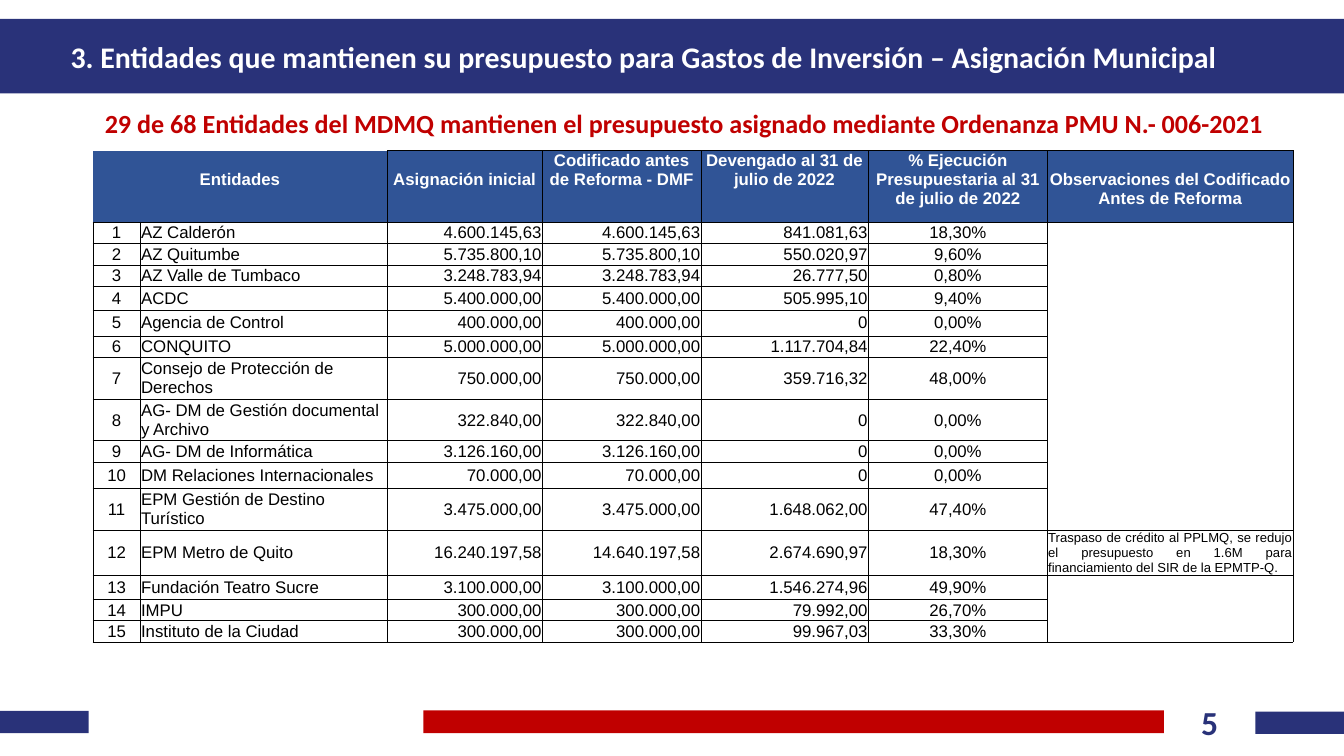
import pptx
import pptx.util
import pptx.dml.color
import pptx.enum.shapes
import pptx.enum.text
import pptx.oxml

Inches = pptx.util.Inches
RGBColor = pptx.dml.color.RGBColor
Align = pptx.enum.text.PP_ALIGN
Anchor = pptx.enum.text.MSO_ANCHOR

NAVY = RGBColor(0x29, 0x32, 0x79)
RED = RGBColor(0xC0, 0x00, 0x00)
BLUE = RGBColor(0x30, 0x54, 0x96)
WHITE = RGBColor(0xFF, 0xFF, 0xFF)
BLACK = RGBColor(0x00, 0x00, 0x00)

BARS = [
    (6.3, 10.57, 11.02, 0.34, RED),
    (0, 10.58, 1.32, 0.33, NAVY),
    (18.68, 10.59, 1.32, 0.33, NAVY),
    (0, 0.28, 20, 1.11, NAVY),
]
TEXTS = [
    ("5", (17.32, 10.4, 1.36, 0.71), 36, NAVY, Align.CENTER, Anchor.TOP, (0.1, 0.05)),
    ("3. Entidades que mantienen su presupuesto para Gastos de Inversión – Asignación Municipal",
     (0.87, 0.28, 17.76, 1.11), 32, WHITE, Align.LEFT, Anchor.MIDDLE, (0.18, 0.09)),
    ("29 de 68 Entidades del MDMQ mantienen el presupuesto asignado mediante Ordenanza PMU N.- 006-2021",
     (1.38, 1.39, 17.86, 0.87), 28, RED, Align.LEFT, Anchor.MIDDLE, (0.18, 0.09)),
]
HEADS = [
    ("Entidades", 1),
    ("", 0),
    ("Asignación inicial", 1),
    ("Codificado antes de Reforma - DMF", 0),
    ("Devengado al 31 de julio de 2022", 0),
    ("% Ejecución Presupuestaria al 31 de julio de 2022", 0),
    ("Observaciones del Codificado Antes de Reforma", 1),
]
ROWS = [
    ("AZ Calderón", "4.600.145,63", "4.600.145,63", "841.081,63", "18,30%"),
    ("AZ Quitumbe", "5.735.800,10", "5.735.800,10", "550.020,97", "9,60%"),
    ("AZ Valle de Tumbaco", "3.248.783,94", "3.248.783,94", "26.777,50", "0,80%"),
    ("ACDC", "5.400.000,00", "5.400.000,00", "505.995,10", "9,40%"),
    ("Agencia de Control", "400.000,00", "400.000,00", "0", "0,00%"),
    ("CONQUITO", "5.000.000,00", "5.000.000,00", "1.117.704,84", "22,40%"),
    ("Consejo de Protección de Derechos", "750.000,00", "750.000,00", "359.716,32", "48,00%"),
    ("AG- DM de Gestión documental y Archivo", "322.840,00", "322.840,00", "0", "0,00%"),
    ("AG- DM de Informática", "3.126.160,00", "3.126.160,00", "0", "0,00%"),
    ("DM Relaciones Internacionales", "70.000,00", "70.000,00", "0", "0,00%"),
    ("EPM Gestión de Destino Turístico", "3.475.000,00", "3.475.000,00", "1.648.062,00", "47,40%"),
    ("EPM Metro de Quito", "16.240.197,58", "14.640.197,58", "2.674.690,97", "18,30%"),
    ("Fundación Teatro Sucre", "3.100.000,00", "3.100.000,00", "1.546.274,96", "49,90%"),
    ("IMPU", "300.000,00", "300.000,00", "79.992,00", "26,70%"),
    ("Instituto de la Ciudad", "300.000,00", "300.000,00", "99.967,03", "33,30%"),
]
NOTES = {12: "Traspaso de crédito al PPLMQ, se redujo el presupuesto en 1.6M "
             "para financiamiento del SIR de la EPMTP-Q."}
WIDTHS = [0.71, 3.67, 2.31, 2.36, 2.49, 2.67, 3.65]
HEIGHTS = [1.06, 0.32, 0.32, 0.32, 0.35, 0.39, 0.32, 0.62, 0.62,
           0.32, 0.39, 0.62, 0.67, 0.36, 0.32, 0.32]
HEIGHTS[12] = 0.67
ALIGNS = [Align.CENTER, Align.LEFT, Align.RIGHT, Align.RIGHT,
          Align.RIGHT, Align.CENTER, Align.JUSTIFY]
MERGES = [(0, 0, 0, 1), (1, 6, 11, 6), (13, 6, 15, 6)]
LINE = 0.28


def style(par, size, face, color, bold, align):
    par.alignment = align
    par.font.size = pptx.util.Pt(size)
    par.font.name = face
    par.font.bold = bold
    par.font.color.rgb = color


def add_bar(slide, left, top, width, height, color):
    bar = slide.shapes.add_shape(pptx.enum.shapes.MSO_SHAPE.RECTANGLE,
                                 *map(Inches, (left, top, width, height)))
    bar.shadow.inherit = False
    bar.fill.solid()
    bar.fill.fore_color.rgb = color
    bar.line.fill.background()


def add_text(slide, text, place, size, color, align, anchor, inset):
    frame = slide.shapes.add_textbox(*map(Inches, place)).text_frame
    frame.word_wrap = True
    frame.vertical_anchor = anchor
    frame.margin_left = frame.margin_right = Inches(inset[0])
    frame.margin_top = frame.margin_bottom = Inches(inset[1])
    frame.text = text
    style(frame.paragraphs[0], size, "Calibri", color, True, align)


def add_edges(cell, sides):
    for side in sides:
        cell._tc.get_or_add_tcPr().append(pptx.oxml.parse_xml(
            f'<a:ln{side} xmlns:a="http://schemas.openxmlformats.org/drawingml/2006/main" w="6350">'
            f'<a:solidFill><a:srgbClr val="{BLACK}"/></a:solidFill></a:ln{side}>'))


def fill_cell(cell, text, row, col):
    head = row == 0
    drop = HEADS[col][1] * LINE if head else 0
    cell.margin_left = cell.margin_right = Inches(0.01)
    cell.margin_top = Inches(0.01 + drop)
    cell.margin_bottom = 0
    cell.vertical_anchor = Anchor.TOP if head else Anchor.MIDDLE
    cell.text = text
    size = 14 if col == 6 and not head else 18
    style(cell.text_frame.paragraphs[0], size, "Arial", WHITE if head else BLACK,
          head, Align.CENTER if head else ALIGNS[col])
    add_edges(cell, "RB" if head and col < 2 else "LRTB")
    if head:
        cell.fill.solid()
        cell.fill.fore_color.rgb = BLUE
    else:
        cell.fill.background()


def add_grid(slide):
    data = [[name for name, _ in HEADS]]
    data += [[str(num), *row, NOTES.get(num, "")] for num, row in enumerate(ROWS, 1)]
    grid = slide.shapes.add_table(len(data), len(WIDTHS), Inches(1.38), Inches(2.24),
                                  Inches(sum(WIDTHS)), Inches(sum(HEIGHTS))).table
    grid.first_row = grid.horz_banding = False
    for col, width in zip(grid.columns, WIDTHS):
        col.width = Inches(width)
    for row, height in zip(grid.rows, HEIGHTS):
        row.height = Inches(height)
    for r, line in enumerate(data):
        for c, text in enumerate(line):
            fill_cell(grid.cell(r, c), text, r, c)
    for top, left, low, right in MERGES:
        grid.cell(top, left).merge(grid.cell(low, right))


def main():
    deck = pptx.Presentation()
    deck.slide_width = Inches(20)
    deck.slide_height = Inches(11.25)
    slide = deck.slides.add_slide(deck.slide_layouts[6])
    for bar in BARS:
        add_bar(slide, *bar)
    add_grid(slide)
    for item in TEXTS:
        add_text(slide, *item)
    deck.save("out.pptx")


if __name__ == "__main__":
    main()
